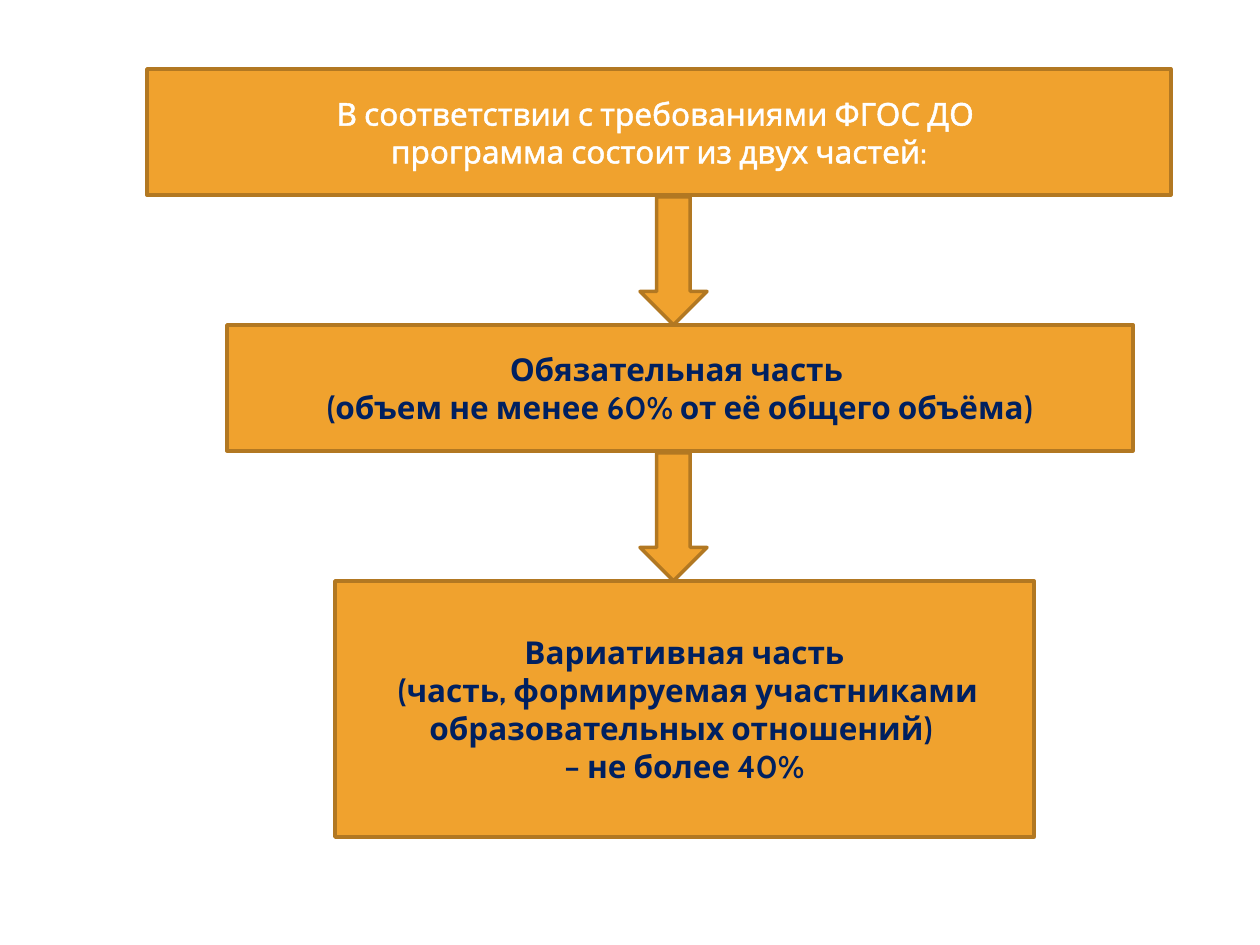
"""Build a slide showing the two parts of the programme as a flow."""
from dataclasses import dataclass

from lxml import etree
from pptx import Presentation
from pptx import util as u
from pptx.dml.color import RGBColor
from pptx.enum import shapes, text
from pptx.oxml import ns

PX = 914400 // 126


@dataclass(frozen=True)
class Theme:
    fill: str = "F0A22E"
    edge: str = "B27822"
    light: str = "FFFFFF"
    dark: str = "002060"
    font: str = "Cabin"
    size: int = 18
    line: int = 2
    rim: float = 1.45


class Flow:
    def __init__(self, slide, theme):
        self.slide = slide
        self.theme = theme

    def shape(self, kind, *rect):
        item = self.slide.shapes.add_shape(kind, *(n * PX for n in rect))
        item.shadow.inherit = False
        item.fill.solid()
        item.fill.fore_color.rgb = RGBColor.from_string(self.theme.fill)
        item.line.color.rgb = RGBColor.from_string(self.theme.edge)
        item.line.width = u.Pt(self.theme.line)
        return item

    def box(self, rect, lines, color, bold=True):
        frame = self.shape(shapes.MSO_SHAPE.RECTANGLE, *rect).text_frame
        frame.word_wrap = True
        frame.vertical_anchor = text.MSO_ANCHOR.MIDDLE
        frame.text = "\n".join(lines)
        for para in frame.paragraphs:
            para.alignment = text.PP_ALIGN.CENTER
            para.font.name = self.theme.font
            para.font.size = u.Pt(self.theme.size)
            para.font.bold = bold
            para.font.color.rgb = RGBColor.from_string(color)
        return frame

    def rim(self, frame, color):
        for para in frame.paragraphs:
            for run in para.runs:
                line = etree.Element(ns.qn("a:ln"), w=str(u.Pt(self.theme.rim)))
                fill = etree.SubElement(line, ns.qn("a:solidFill"))
                etree.SubElement(fill, ns.qn("a:srgbClr"), val=color)
                run._r.get_or_add_rPr().insert(0, line)

    def arrow(self, *rect):
        self.shape(shapes.MSO_SHAPE.DOWN_ARROW, *rect)


def main():
    deck = Presentation()
    deck.slide_width, deck.slide_height = u.Inches(10), u.Inches(7.5)
    theme = Theme()
    flow = Flow(deck.slides.add_slide(deck.slide_layouts[6]), theme)

    head = flow.box(
        (147, 69, 1024, 126),
        ["В соответствии с требованиями ФГОС ДО ", "программа состоит из двух частей:"],
        theme.light,
        bold=False,
    )
    flow.rim(head, theme.light)
    flow.box(
        (227, 325, 906, 126),
        ["Обязательная часть ", "(объем не менее 60% от её общего объёма)"],
        theme.dark,
    )
    flow.box(
        (335, 581, 699, 256),
        [
            "Вариативная часть",
            " (часть, формируемая участниками образовательных отношений) ",
            "– не более 40%",
        ],
        theme.dark,
    )
    for top in (197, 453):
        flow.arrow(640, top, 67, 128)

    deck.save("out.pptx")


if __name__ == "__main__":
    main()
